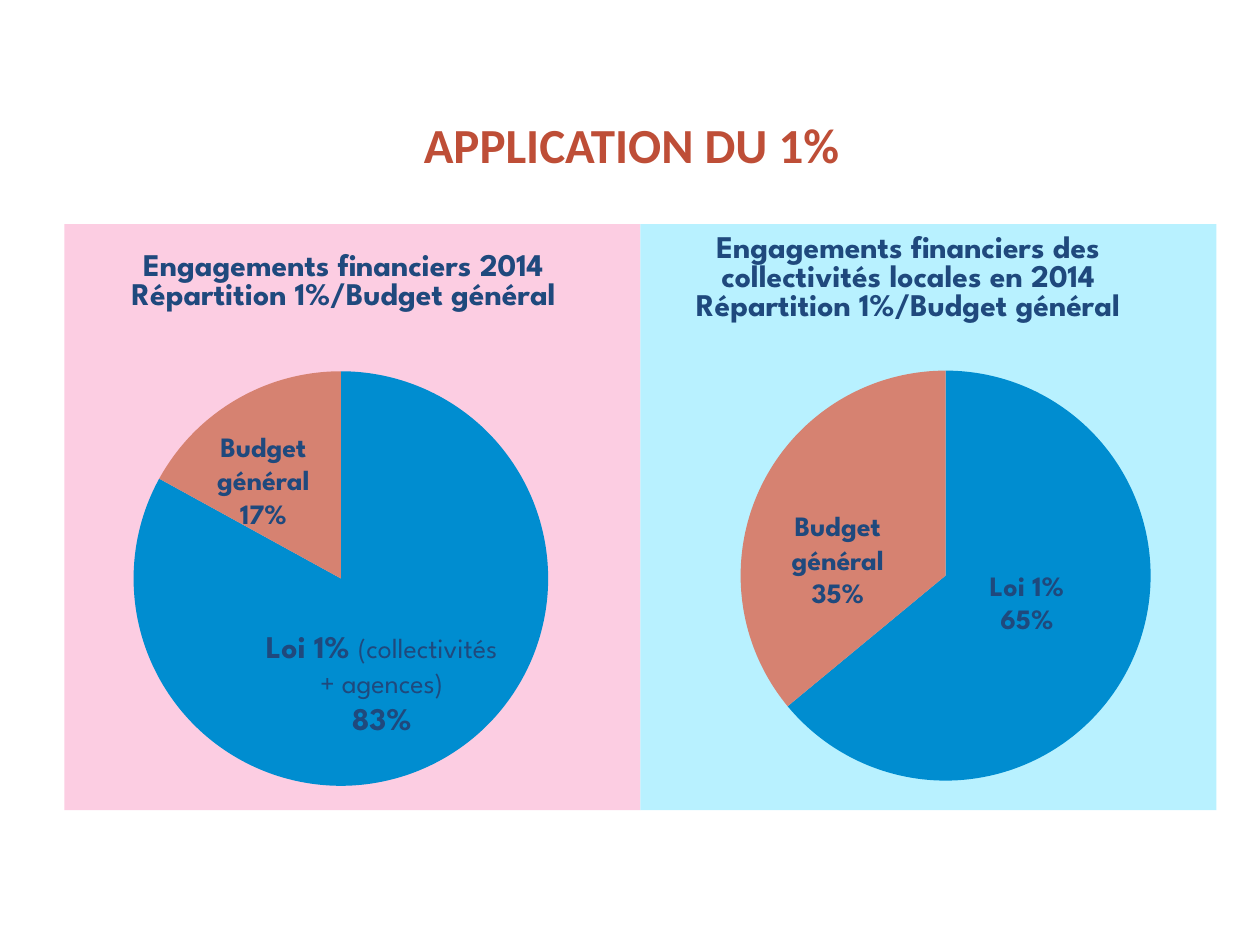
from dataclasses import dataclass
from typing import NamedTuple

from lxml import etree
from pptx import Presentation
from pptx.chart.data import CategoryChartData as ChartData
from pptx.dml.color import RGBColor as Rgb
from pptx.enum.chart import XL_CHART_TYPE as ChartType
from pptx.enum.text import MSO_ANCHOR as Anchor, PP_ALIGN as Align
from pptx.oxml import parse_xml
from pptx.oxml.ns import nsdecls, qn
from pptx.util import Cm, Pt


@dataclass(frozen=True)
class Theme:
    heading: str = "BE4E37"
    ink: str = "1F497D"
    slices: tuple[str, ...] = ("008DD0", "D68271")
    pink: str = "FCCDE2"
    cyan: str = "B8F1FF"
    heading_font: str = "Calibri"
    label_font: str = "League Spartan"
    chart_font: str = "Cabin"
    heading_size: int = 28
    large: int = 18
    medium: int = 16
    small: int = 10


THEME = Theme()
MARGIN, PANEL_TOP = 1.3, 4.52
PANEL_WIDTH, PANEL_HEIGHT = 11.61, 11.81


class Span(NamedTuple):
    text: str
    size: int = THEME.medium
    bold: bool = True


class Label(NamedTuple):
    left: float
    top: float
    width: float
    height: float
    lines: list[list[Span]]


class Panel(NamedTuple):
    title: list[str]
    title_place: dict[str, float]
    fill: str
    plot: dict[str, float]
    values: tuple[int, int]


PANELS = [
    Panel(["Engagements financiers 2014", "Répartition 1%/Budget général"],
          dict(x=0.11, y=0.04), THEME.pink,
          dict(x=0.12, y=0.25, w=0.72, h=0.71), (83, 17)),
    Panel(["Engagements financiers des collectivités locales en 2014",
           "Répartition 1%/Budget général"],
          dict(x=0.09, y=0.01), THEME.cyan,
          dict(x=0.17, y=0.25, w=0.72, h=0.7), (64, 36)),
]


def budget_lines(share: str) -> list[list[Span]]:
    return [[Span(text)] for text in ("Budget", "général", share)]


LABELS = [
    Label(4.9, 12.52, 5.59, 2.49, [
        [Span("Loi 1% ", THEME.large), Span("(collectivités + agences)", bold=False)],
        [Span("83%", THEME.large)]]),
    Label(3.71, 8.53, 3.2, 2.39, budget_lines("17%")),
    Label(15.29, 10.13, 3.2, 2.39, budget_lines("35%")),
    Label(19.1, 11.33, 3.2, 1.63, [[Span("Loi 1%")], [Span("65%")]]),
]


def add_span(para, text: str, *, size: int, bold: bool = True,
             font: str = THEME.label_font, color: str = THEME.ink) -> None:
    span = para.add_run()
    span.text = text
    span.font.name = font
    span.font.size = Pt(size)
    span.font.bold = bold
    span.font.color.rgb = Rgb.from_string(color)


def add_box(page, left: float, top: float, width: float, height: float):
    box = page.shapes.add_textbox(Cm(left), Cm(top), Cm(width), Cm(height))
    box.text_frame.word_wrap = True
    return box.text_frame


def add_paragraph(frame, index: int):
    para = frame.add_paragraph() if index else frame.paragraphs[0]
    para.alignment = Align.CENTER
    return para


def add_heading(page, text: str) -> None:
    frame = add_box(page, MARGIN, 1.32, 22.86, 3.18)
    frame.vertical_anchor = Anchor.MIDDLE
    add_span(add_paragraph(frame, 0), text, size=THEME.heading_size,
             font=THEME.heading_font, color=THEME.heading)


def add_label(page, label: Label) -> None:
    frame = add_box(page, label.left, label.top, label.width, label.height)
    for index, line in enumerate(label.lines):
        para = add_paragraph(frame, index)
        for text, size, bold in line:
            add_span(para, text, size=size, bold=bold)


def make_layout(place: dict[str, float], inner: bool = False) -> etree._Element:
    target = '<c:layoutTarget val="inner"/>' if inner else ""
    modes = "".join(f'<c:{key}Mode val="edge"/>' for key in ("x", "y"))
    sizes = "".join(f'<c:{key} val="{value}"/>' for key, value in place.items())
    return parse_xml(f'<c:layout {nsdecls("c")}><c:manualLayout>'
                     f'{target}{modes}{sizes}</c:manualLayout></c:layout>')


def set_layout(parent, layout: etree._Element, position: int) -> None:
    for old in parent.findall(qn("c:layout")):
        parent.remove(old)
    parent.insert(position, layout)


def add_panel(page, column: int, panel: Panel) -> None:
    data = ChartData()
    data.categories = ["1", "2"]
    data.add_series("Series 1", panel.values)
    chart = page.shapes.add_chart(
        ChartType.PIE, Cm(MARGIN + column * PANEL_WIDTH), Cm(PANEL_TOP),
        Cm(PANEL_WIDTH), Cm(PANEL_HEIGHT), data).chart
    chart.has_legend = False
    chart.font.name = THEME.chart_font
    chart.font.size = Pt(THEME.small)
    chart.font.color.rgb = Rgb.from_string(THEME.ink)

    title = chart.chart_title
    for index, line in enumerate(panel.title):
        add_span(add_paragraph(title.text_frame, index), line, size=THEME.large)
    title.include_in_layout = False
    set_layout(title._element, make_layout(panel.title_place), 1)

    plot = chart.plots[0]
    plot.vary_by_categories = True
    for index, color in enumerate(THEME.slices):
        piece = plot.series[0].points[index].format
        piece.fill.solid()
        piece.fill.fore_color.rgb = Rgb.from_string(color)
        piece.line.fill.background()

    root = chart._chartSpace
    set_layout(root.chart.plotArea, make_layout(panel.plot, inner=True), 0)
    root.chart.addnext(parse_xml(
        f'<c:spPr {nsdecls("c", "a")}><a:solidFill><a:srgbClr val="{panel.fill}"/>'
        '</a:solidFill><a:ln><a:noFill/></a:ln></c:spPr>'))


def main() -> None:
    deck = Presentation()
    deck.slide_width, deck.slide_height = Cm(25.4), Cm(19.05)
    page = deck.slides.add_slide(deck.slide_layouts[6])
    add_heading(page, "APPLICATION DU 1%")
    for column, panel in enumerate(PANELS):
        add_panel(page, column, panel)
    for label in LABELS:
        add_label(page, label)
    deck.save("out.pptx")


if __name__ == "__main__":
    main()
